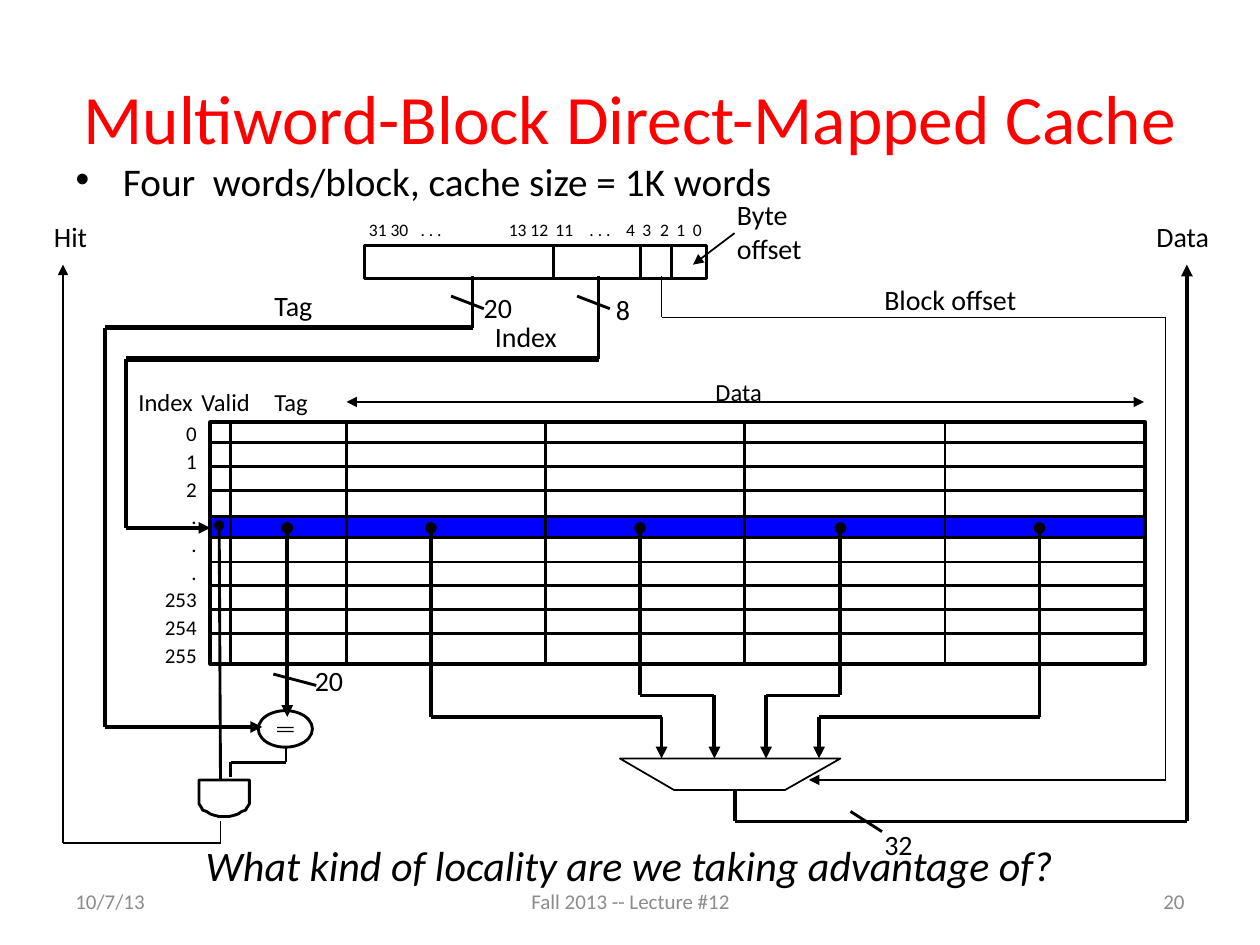
from math import cos, pi, sin

from lxml.etree import SubElement
from pptx import Presentation
from pptx.dml.color import RGBColor
from pptx.enum.shapes import MSO_CONNECTOR, MSO_SHAPE
from pptx.enum.text import MSO_ANCHOR, MSO_AUTO_SIZE, PP_ALIGN
from pptx.oxml.ns import qn
from pptx.util import Pt

PX = 9144  # EMU per px, 100 px to the inch
FONT, BLACK, GREY, RED, BLUE = "Calibri", "000000", "8C8C8C", "FF0000", "0000FF"
THIN, MEDIUM, THICK, HEAVY = 1, 1.63, 2.25, 3

prs = Presentation()
prs.slide_width, prs.slide_height = 1000 * PX, 750 * PX
slide = prs.slides.add_slide(prs.slide_layouts[1])
shapes = slide.shapes


def label(text, box, size=16, color=BLACK, align=PP_ALIGN.LEFT, wrap=False, holder=None):
    """Write text, one paragraph a line, in a new text box or a given placeholder."""
    left, top, width, height = [n * PX for n in box]
    holder = holder or shapes.add_textbox(left, top, width, height)
    holder.left, holder.top, holder.width, holder.height = left, top, width, height
    frame = holder.text_frame
    frame.word_wrap, frame.auto_size = wrap, MSO_AUTO_SIZE.NONE
    for i, line in enumerate(text.split("\n")):
        paragraph = frame.add_paragraph() if i else frame.paragraphs[0]
        paragraph.alignment = align
        run = paragraph.add_run()
        run.text = line
        run.font.name, run.font.size = FONT, Pt(size)
        run.font.color.rgb = RGBColor.from_string(color)
    return frame


def wire(points, width, head=None, tail=None):
    """Join the points with straight connectors; head and tail mark the two ends."""
    last = len(points) - 2
    for i, (start, end) in enumerate(zip(points, points[1:])):
        segment = shapes.add_connector(
            MSO_CONNECTOR.STRAIGHT, *[n * PX for n in (*start, *end)])
        segment.line.width = Pt(width)
        segment.line.color.rgb = RGBColor.from_string(BLACK)
        ln = segment.line._get_or_add_ln()
        if head and i == 0:
            SubElement(ln, qn("a:headEnd"), type=head)
        if tail and i == last:
            SubElement(ln, qn("a:tailEnd"), type=tail)
        SubElement(segment._element.spPr, qn("a:effectLst"))


# Title and bullet
label("Multiword-Block Direct-Mapped Cache", (50, 30, 900, 125), 39.6, RED,
      PP_ALIGN.CENTER, True, shapes.title)
bullet = label("Four  words/block, cache size = 1K words", (50, 133, 883, 58), 22.4,
               wrap=True, holder=slide.placeholders[1]).paragraphs[0]
bullet.line_spacing, bullet.space_before = 0.6, Pt(4.5)

# Outlines: boxes, gates and the selected row
selected_row = shapes.add_shape(
    MSO_SHAPE.RECTANGLE, 167 * PX, 410 * PX, 741 * PX, 17 * PX)
cache = shapes.add_shape(MSO_SHAPE.RECTANGLE, 167 * PX, 335 * PX, 742 * PX, 192 * PX)
address = shapes.add_shape(MSO_SHAPE.RECTANGLE, 289 * PX, 195 * PX, 272 * PX, 26 * PX)
comparator = shapes.add_shape(MSO_SHAPE.OVAL, 205 * PX, 564 * PX, 43 * PX, 29 * PX)

equals_builder = shapes.build_freeform(220, 577, scale=PX)
equals_builder.add_line_segments([(233, 577), (233, 578), (220, 578)])
equals_builder.move_to(220, 580)
equals_builder.add_line_segments([(233, 580), (233, 581), (220, 581)])
equals_sign = equals_builder.convert_to_shape()

gate_builder = shapes.build_freeform(158, 619, scale=PX)
gate_builder.add_line_segments(
    [(178 - 20 * cos(pi * i / 16), 636 + 12 * sin(pi * i / 16)) for i in range(17)]
    + [(198, 619)])
and_gate = gate_builder.convert_to_shape()

mux_builder = shapes.build_freeform(492, 602, scale=PX)
mux_builder.add_line_segments([(535, 627), (623, 627), (667, 602)])
mux = mux_builder.convert_to_shape()

for outline, fill, line_width in [
    (selected_row, BLUE, MEDIUM), (cache, None, THICK), (address, None, MEDIUM),
    (comparator, None, MEDIUM), (equals_sign, BLACK, None), (and_gate, None, MEDIUM),
    (mux, None, THIN),
]:
    outline.shadow.inherit = False
    if fill:
        outline.fill.solid()
        outline.fill.fore_color.rgb = RGBColor.from_string(fill)
    else:
        outline.fill.background()
    if line_width:
        outline.line.width = Pt(line_width)
        outline.line.color.rgb = RGBColor.from_string(BLACK)
    else:
        outline.line.fill.background()

# Address fields
for x in (439, 508, 533):
    wire([(x, 221), (x, 195)], MEDIUM)
bits = label("31 30\t. . .\t13 12\t11\t. . .\t4\t3\t2\t1\t0", (283, 169, 335, 27), 10,
             wrap=True).paragraphs[0]
tab_list = SubElement(bits._p.get_or_add_pPr(), qn("a:tabLst"))
for stop in (41, 111, 148, 175, 204, 217, 231, 244, 257):
    SubElement(tab_list, qn("a:tab"), pos=str(stop * PX), algn="l")
label("Byte offset", (575, 152, 92, 64), wrap=True)
wire([(583, 185), (550, 210)], THIN, tail="triangle")

# Cache grid
for first in (351, 446):
    for y in range(first, first + 19 * (3 if first == 351 else 4), 19):
        wire([(908, y), (167, y)], MEDIUM)
for x in [183] + [275 + word * 475 // 3 for word in range(4)]:
    wire([(x, 335), (x, 527)], MEDIUM)
wire([(275, 319), (908, 319)], THIN, "triangle", "triangle")
for heading, box in [
    ("Data", (558, 294, 61, 33)), ("Index", (100, 302, 68, 33)),
    ("Tag", (208, 302, 53, 33)), ("Valid", (150, 302, 63, 33)),
]:
    label(heading, box, 14)
row_numbers = label("0\n1\n2\n.\n.\n.\n253\n254\n255", (118, 327, 48, 209), 12,
                    align=PP_ALIGN.RIGHT)
for paragraph in row_numbers.paragraphs:
    paragraph.line_spacing = 1.1

# Index and tag paths
for path_points, line_width in [
    ([(475, 219), (475, 285)], THICK), ([(475, 285), (100, 285)], HEAVY),
    ([(375, 219), (375, 260)], THICK), ([(375, 260), (83, 260)], HEAVY),
]:
    wire(path_points, line_width)
wire([(100, 285), (100, 419), (167, 419)], THICK, tail="triangle")
wire([(83, 260), (83, 577), (208, 577)], THICK, tail="triangle")
wire([(228, 419), (228, 569)], THICK, "oval", "triangle")

# Hit path
wire([(174, 417), (175, 619)], MEDIUM, "oval")
wire([(227, 593), (227, 605), (183, 605), (183, 617)], MEDIUM)
wire([(175, 652), (175, 669), (50, 669), (50, 210)], THIN, tail="triangle")

# Data words into the multiplexer and out
for word_x, turn_y, input_x in [
    (342, 569, 525), (508, 552, 567), (667, 552, 608), (825, 569, 650),
]:
    wire([(word_x, 419), (word_x, turn_y), (input_x, turn_y), (input_x, 602)],
         THICK, "oval", "triangle")
wire([(525, 219), (525, 252), (925, 252), (925, 619), (642, 619)], THIN, tail="triangle")
wire([(583, 627), (583, 652), (942, 652), (942, 210)], THICK, tail="triangle")

# Bus width ticks
for start, end in [
    ((458, 235), (484, 245)), ((358, 235), (384, 245)),
    ((217, 535), (251, 544)), ((675, 644), (700, 660)),
]:
    wire([start, end], MEDIUM)

# Signal names and bus widths
for name, box in [
    ("8", (479, 227, 33, 37)), ("Index", (383, 249, 74, 37)),
    ("20", (240, 522, 45, 37)), ("20", (374, 226, 45, 37)),
    ("Tag", (208, 224, 58, 37)), ("Hit", (33, 169, 47, 37)),
    ("Data", (908, 169, 67, 37)), ("32", (692, 652, 45, 37)),
]:
    label(name, box)
label("Block offset", (692, 219, 175, 37), wrap=True)

# Closing question and footer
question = label("What kind of locality are we taking advantage of?",
                 (58, 666, 883, 50), 24, align=PP_ALIGN.CENTER, wrap=True).paragraphs[0]
question.line_spacing = 0.9
question.runs[0].font.italic = True
for text, box, align in [
    ("10/7/13", (50, 695, 233, 40), PP_ALIGN.LEFT),
    ("20", (717, 695, 233, 40), PP_ALIGN.RIGHT),
    ("Fall 2013 -- Lecture #12", (342, 695, 317, 40), PP_ALIGN.CENTER),
]:
    label(text, box, 12, GREY, align, True).vertical_anchor = MSO_ANCHOR.MIDDLE

prs.save("out.pptx")
